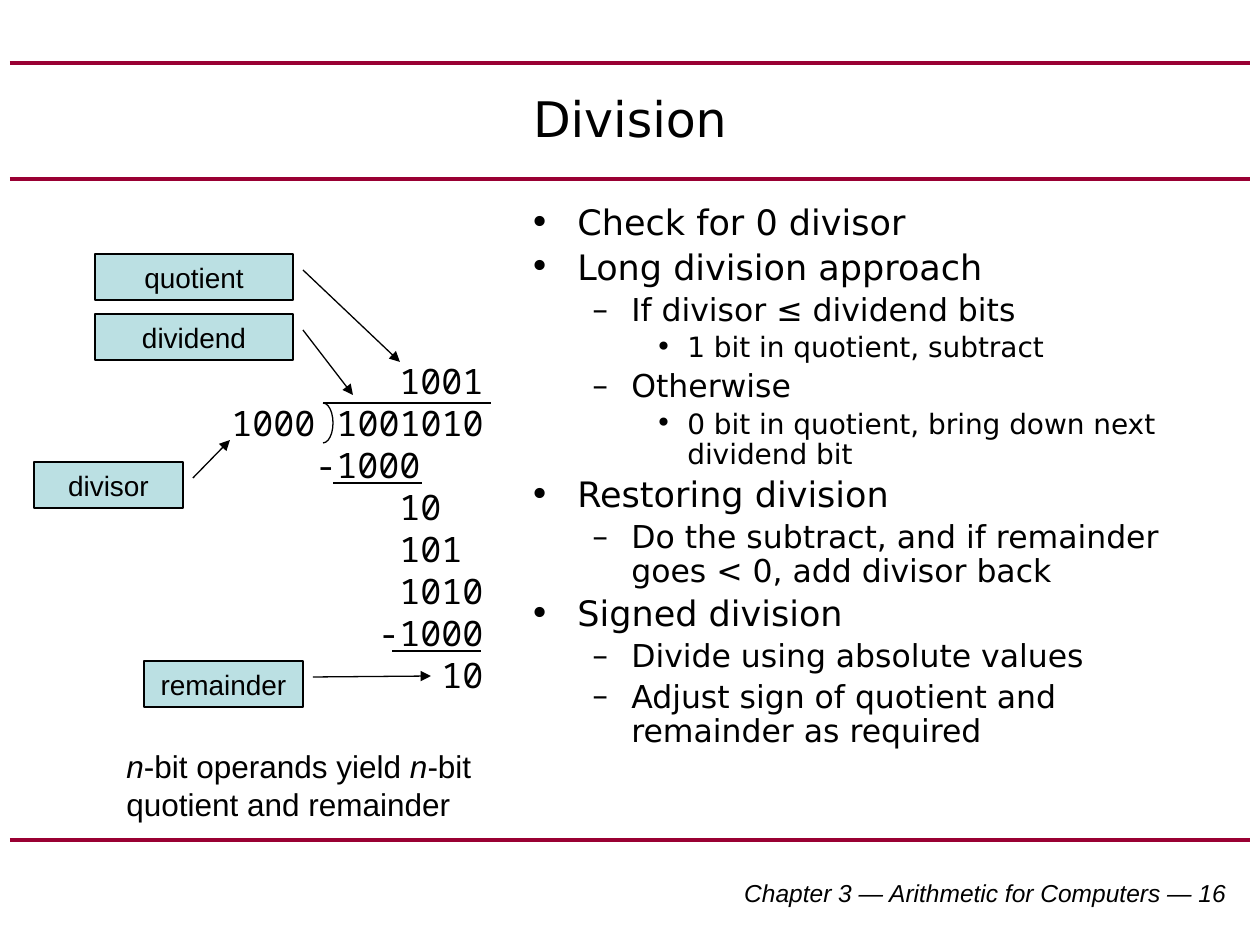
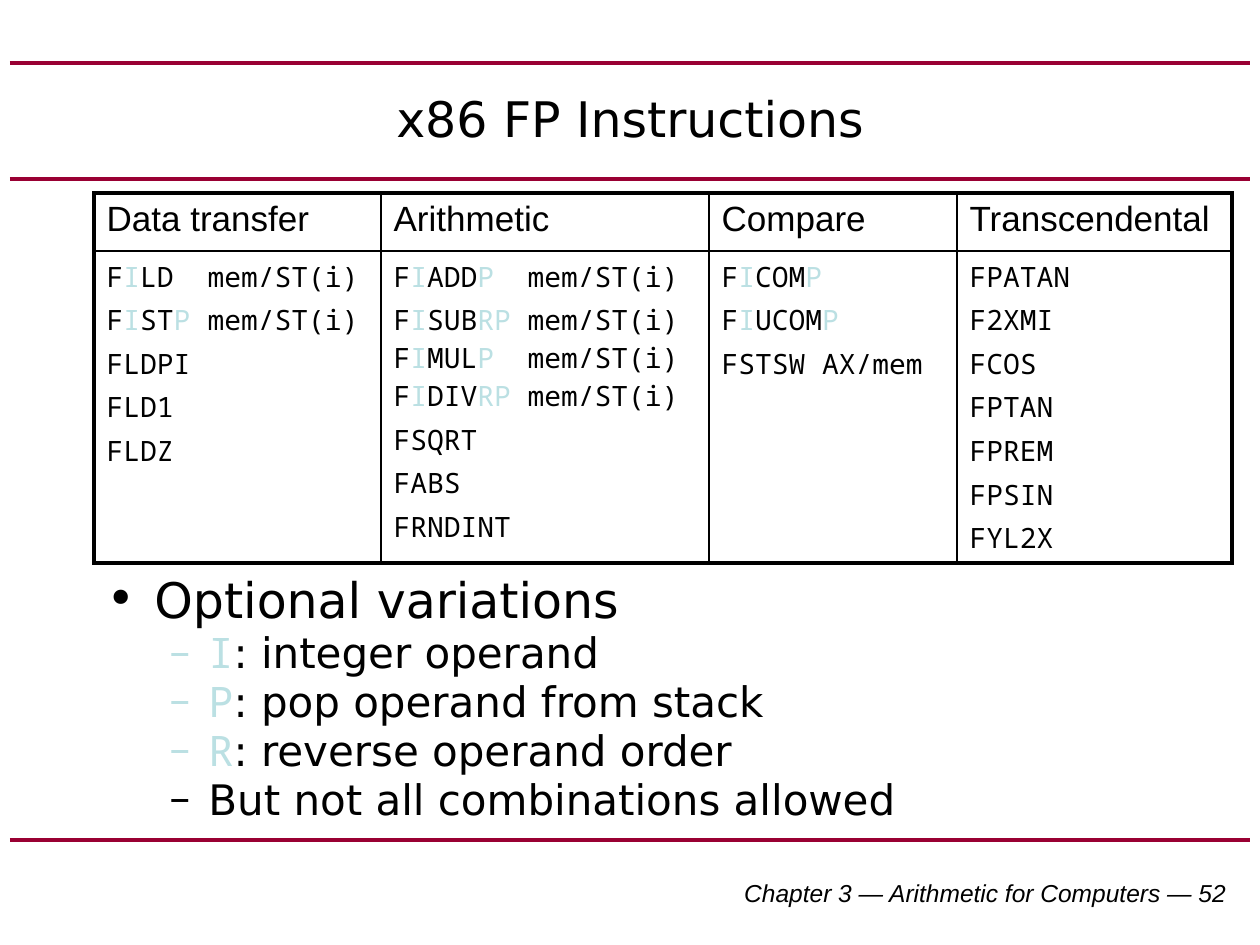
import dataclasses
import typing

import lxml.etree
import pptx
import pptx.dml.color
import pptx.enum.shapes
import pptx.enum.text
import pptx.oxml.ns
import pptx.presentation
import pptx.shapes.base
import pptx.slide
import pptx.table
import pptx.text.text
import pptx.util

ALIGN = pptx.enum.text.PP_ALIGN
ANCHOR = pptx.enum.text.MSO_ANCHOR
SHAPE = pptx.enum.shapes.MSO_SHAPE
qn = pptx.oxml.ns.qn
EMU_PER_PX = 914400 / 126


@dataclasses.dataclass(frozen=True)
class Style:
    font: str
    size: int
    color: str = "000000"
    italic: bool = False


@dataclasses.dataclass(frozen=True)
class Theme:
    ink: str = "000000"
    rule: str = "990033"
    accent: str = "BBE0E3"
    rule_width: float = 2.25
    thin: float = 0.75
    space_before: float = 0.2
    title: Style = Style("DejaVu Sans", 28)
    body: Style = Style("DejaVu Sans", 20)
    footer: Style = Style("Arial", 14, italic=True)
    label: Style = Style("Arial", 16)
    note: Style = Style("Arial", 18)
    header: Style = Style("Arial", 20)
    work: Style = Style("Noto Sans Mono", 20)
    code: Style = Style("Noto Sans Mono", 16)


THEME = Theme()


class Box(typing.NamedTuple):
    x: int
    y: int
    w: int
    h: int


class Callout(typing.NamedTuple):
    text: str
    box: Box
    tip: tuple[int, int]


class Bullet(typing.NamedTuple):
    level: int
    text: str


class Level(typing.NamedTuple):
    mark: str
    margin: int
    hanging: int


class WorkLine(typing.NamedTuple):
    column: int
    text: str


class Column(typing.NamedTuple):
    heading: str
    width: int
    tab: int
    lines: list[str]


LEVELS = [Level("•", 48, 48), Level("–", 102, 39), Level("•", 158, 32)]
RULES_Y = [840, 179, 63]
CHAR_WIDTH = 21
ROW_HEIGHTS = [58, 312]

CALLOUTS = [
    Callout("quotient", Box(95, 254, 198, 46), (400, 362)),
    Callout("dividend", Box(95, 314, 198, 46), (353, 395)),
    Callout("remainder", Box(144, 661, 159, 46), (431, 676)),
    Callout("divisor", Box(34, 462, 149, 46), (230, 440)),
]
WORK = [
    WorkLine(8, "1001"),
    WorkLine(0, "1000 1001010"),
    WorkLine(4, "-1000"),
    WorkLine(8, "10"),
    WorkLine(8, "101"),
    WorkLine(8, "1010"),
    WorkLine(7, "-1000"),
    WorkLine(10, "10"),
]
WORK_RULES = [(491, 323, 403), (422, 333, 483), (481, 392, 651)]
DIVISION_POINTS = [
    Bullet(0, "Check for 0 divisor"),
    Bullet(0, "Long division approach"),
    Bullet(1, "If divisor ≤ dividend bits"),
    Bullet(2, "1 bit in quotient, subtract"),
    Bullet(1, "Otherwise"),
    Bullet(2, "0 bit in quotient, bring down next dividend bit"),
    Bullet(0, "Restoring division"),
    Bullet(1, "Do the subtract, and if remainder goes < 0, add divisor back"),
    Bullet(0, "Signed division"),
    Bullet(1, "Divide using absolute values"),
    Bullet(1, "Adjust sign of quotient and remainder as required"),
]
VARIATIONS = [
    Bullet(0, "Optional variations"),
    Bullet(1, "|I|: integer operand"),
    Bullet(1, "|P|: pop operand from stack"),
    Bullet(1, "|R|: reverse operand order"),
    Bullet(1, "But not all combinations allowed"),
]
INSTRUCTIONS = [
    Column("Data transfer", 287, 101, [
        "F|I|LD\tmem/ST(i)", "F|I|ST|P|\tmem/ST(i)", "FLDPI", "FLD1", "FLDZ"]),
    Column("Arithmetic", 328, 134, [
        "F|I|ADD|P|\tmem/ST(i)",
        "F|I|SUB|RP|\tmem/ST(i)\nF|I|MUL|P|\tmem/ST(i)\nF|I|DIV|RP|\tmem/ST(i)",
        "FSQRT", "FABS", "FRNDINT"]),
    Column("Compare", 248, 0, ["F|I|COM|P|", "F|I|UCOM|P|", "FSTSW AX/mem"]),
    Column("Transcendental", 275, 0, [
        "FPATAN", "F2XMI", "FCOS", "FPTAN", "FPREM", "FPSIN", "FYL2X"]),
]


def px(n: float) -> pptx.util.Emu:
    return pptx.util.Emu(round(n * EMU_PER_PX))


def rgb(color: str) -> pptx.dml.color.RGBColor:
    return pptx.dml.color.RGBColor.from_string(color)


def add_runs(p: pptx.text.text._Paragraph, text: str, plain: Style,
             marked: Style | None = None) -> None:
    for n, line in enumerate(text.split("\n")):
        if n:
            p.add_line_break()
        for i, piece in enumerate(line.split("|")):
            if not piece:
                continue
            style = marked if marked and i % 2 else plain
            r = p.add_run()
            r.text = piece
            r.font.name = style.font
            r.font.size = pptx.util.Pt(style.size)
            r.font.italic = style.italic
            r.font.color.rgb = rgb(style.color)


def next_paragraph(tf: pptx.text.text.TextFrame, index: int,
                   size: int = 0) -> pptx.text.text._Paragraph:
    if index == 0:
        return tf.paragraphs[0]
    p = tf.add_paragraph()
    p.space_before = pptx.util.Pt(round(size * THEME.space_before, 1))
    return p


def set_indent(p: pptx.text.text._Paragraph, margin: int, hanging: int = 0) -> None:
    pPr = p._p.get_or_add_pPr()
    pPr.set("marL", str(px(margin)))
    pPr.set("indent", str(px(-hanging)))


def add_textbox(s: pptx.slide.Slide, box: Box) -> pptx.text.text.TextFrame:
    tf = s.shapes.add_textbox(*map(px, box)).text_frame
    tf.word_wrap = True
    return tf


def add_line(s: pptx.slide.Slide, x1: int, x2: int, y: int, color: str, width: float) -> None:
    sp = s.shapes.add_connector(pptx.enum.shapes.MSO_CONNECTOR.STRAIGHT,
                                px(x1), px(y), px(x2), px(y))
    sp.line.color.rgb = rgb(color)
    sp.line.width = pptx.util.Pt(width)
    lxml.etree.SubElement(sp._element.spPr, qn("a:effectLst"))


def add_outline(sp: pptx.shapes.base.BaseShape) -> None:
    sp.shadow.inherit = False
    sp.line.color.rgb = rgb(THEME.ink)
    sp.line.width = pptx.util.Pt(THEME.thin)


def add_frame(prs: pptx.presentation.Presentation, title: str, number: int) -> pptx.slide.Slide:
    s = prs.slides.add_slide(prs.slide_layouts[6])
    for y in RULES_Y:
        add_line(s, 10, 1250, y, THEME.rule, THEME.rule_width)
    p = add_textbox(s, Box(473, 872, 766, 42)).paragraphs[0]
    p.alignment = ALIGN.RIGHT
    add_runs(p, f"Chapter 3 — Arithmetic for Computers — {number}", THEME.footer)
    tf = add_textbox(s, Box(63, 63, 1134, 110))
    tf.vertical_anchor = ANCHOR.MIDDLE
    tf.paragraphs[0].alignment = ALIGN.CENTER
    add_runs(tf.paragraphs[0], title, THEME.title)
    return s


def add_bullets(s: pptx.slide.Slide, box: Box, bullets: list[Bullet],
                sizes: list[int], line_spacing: float) -> None:
    tf = add_textbox(s, box)
    for i, bullet in enumerate(bullets):
        size = sizes[bullet.level]
        level = LEVELS[bullet.level]
        p = next_paragraph(tf, i, size)
        p.level = bullet.level
        p.line_spacing = line_spacing
        set_indent(p, level.margin, level.hanging)
        pPr = p._p.get_or_add_pPr()
        lxml.etree.SubElement(pPr, qn("a:buFont"), typeface=THEME.body.font)
        lxml.etree.SubElement(pPr, qn("a:buChar"), char=level.mark)
        add_runs(p, bullet.text, dataclasses.replace(THEME.body, size=size),
                 dataclasses.replace(THEME.code, size=size, color=THEME.accent))


def add_callout(s: pptx.slide.Slide, callout: Callout) -> None:
    box, (tip_x, tip_y) = callout.box, callout.tip
    sp = s.shapes.add_shape(SHAPE.LINE_CALLOUT_1, *map(px, box))
    leader = [16 / box.h, 1 + 10 / box.w, (tip_y - box.y) / box.h, (tip_x - box.x) / box.w]
    for i, value in enumerate(leader):
        sp.adjustments[i] = value
    sp.fill.solid()
    sp.fill.fore_color.rgb = rgb(THEME.accent)
    add_outline(sp)
    lxml.etree.SubElement(sp._element.spPr.find(qn("a:ln")), qn("a:tailEnd"), type="triangle")
    tf = sp.text_frame
    tf.vertical_anchor = ANCHOR.TOP
    tf.paragraphs[0].alignment = ALIGN.CENTER
    add_runs(tf.paragraphs[0], callout.text, THEME.label)


def set_borders(cell: pptx.table._Cell, widths: dict[str, float]) -> None:
    tcPr = cell._tc.get_or_add_tcPr()
    for side, width in widths.items():
        ln = lxml.etree.SubElement(tcPr, qn(f"a:ln{side}"), w=str(pptx.util.Pt(width)))
        fill = lxml.etree.SubElement(ln, qn("a:solidFill"))
        lxml.etree.SubElement(fill, qn("a:srgbClr"), val=THEME.ink)
    cell.fill.background()


def add_instruction_table(s: pptx.slide.Slide, columns: list[Column]) -> None:
    box = Box(94, 193, sum(c.width for c in columns), sum(ROW_HEIGHTS))
    table = s.shapes.add_table(len(ROW_HEIGHTS), len(columns), *map(px, box)).table
    table.first_row = table.horz_banding = False
    for row, height in zip(table.rows, ROW_HEIGHTS):
        row.height = px(height)
    outer, middle, inner = 2.25, 1.5, 1
    code_accent = dataclasses.replace(THEME.code, color=THEME.accent)
    for c, column in enumerate(columns):
        table.columns[c].width = px(column.width)
        head, body = table.cell(0, c), table.cell(1, c)
        for cell, top, bottom in ((head, outer, middle), (body, middle, outer)):
            set_borders(cell, {"L": inner if c else outer,
                               "R": inner if c < len(columns) - 1 else outer,
                               "T": top, "B": bottom})
        add_runs(head.text_frame.paragraphs[0], column.heading, THEME.header)
        for i, line in enumerate(column.lines):
            p = next_paragraph(body.text_frame, i, THEME.code.size)
            if "\t" in line:
                tabs = lxml.etree.SubElement(p._p.get_or_add_pPr(), qn("a:tabLst"))
                lxml.etree.SubElement(tabs, qn("a:tab"), pos=str(px(column.tab)), algn="l")
            add_runs(p, line, THEME.code, code_accent)


def build_division(prs: pptx.presentation.Presentation) -> None:
    s = add_frame(prs, "Division", 16)
    add_bullets(s, Box(517, 199, 717, 660), DIVISION_POINTS, [20, 18, 16], 0.9)
    tf = add_textbox(s, Box(219, 353, 282, 349))
    for i, line in enumerate(WORK):
        p = next_paragraph(tf, i)
        set_indent(p, line.column * CHAR_WIDTH)
        add_runs(p, line.text, THEME.work)
    for x1, x2, y in WORK_RULES:
        add_line(s, x1, x2, y, THEME.ink, THEME.thin)
    bracket = s.shapes.add_shape(SHAPE.ARC, *map(px, Box(313, 403, 20, 40)))
    bracket.adjustments[1] = 54
    bracket.fill.background()
    add_outline(bracket)
    p = add_textbox(s, Box(114, 741, 380, 88)).paragraphs[0]
    add_runs(p, "|n|-bit operands yield |n|-bit\nquotient and remainder", THEME.note,
             dataclasses.replace(THEME.note, italic=True))
    for callout in CALLOUTS:
        add_callout(s, callout)


def build_instructions(prs: pptx.presentation.Presentation) -> None:
    s = add_frame(prs, "x86 FP Instructions", 52)
    add_bullets(s, Box(94, 575, 1140, 285), VARIATIONS, [28, 24], 0.8)
    add_instruction_table(s, INSTRUCTIONS)


def main() -> None:
    prs = pptx.Presentation()
    prs.slide_width, prs.slide_height = px(1260), px(945)
    build_division(prs)
    build_instructions(prs)
    prs.save("out.pptx")


if __name__ == "__main__":
    main()
